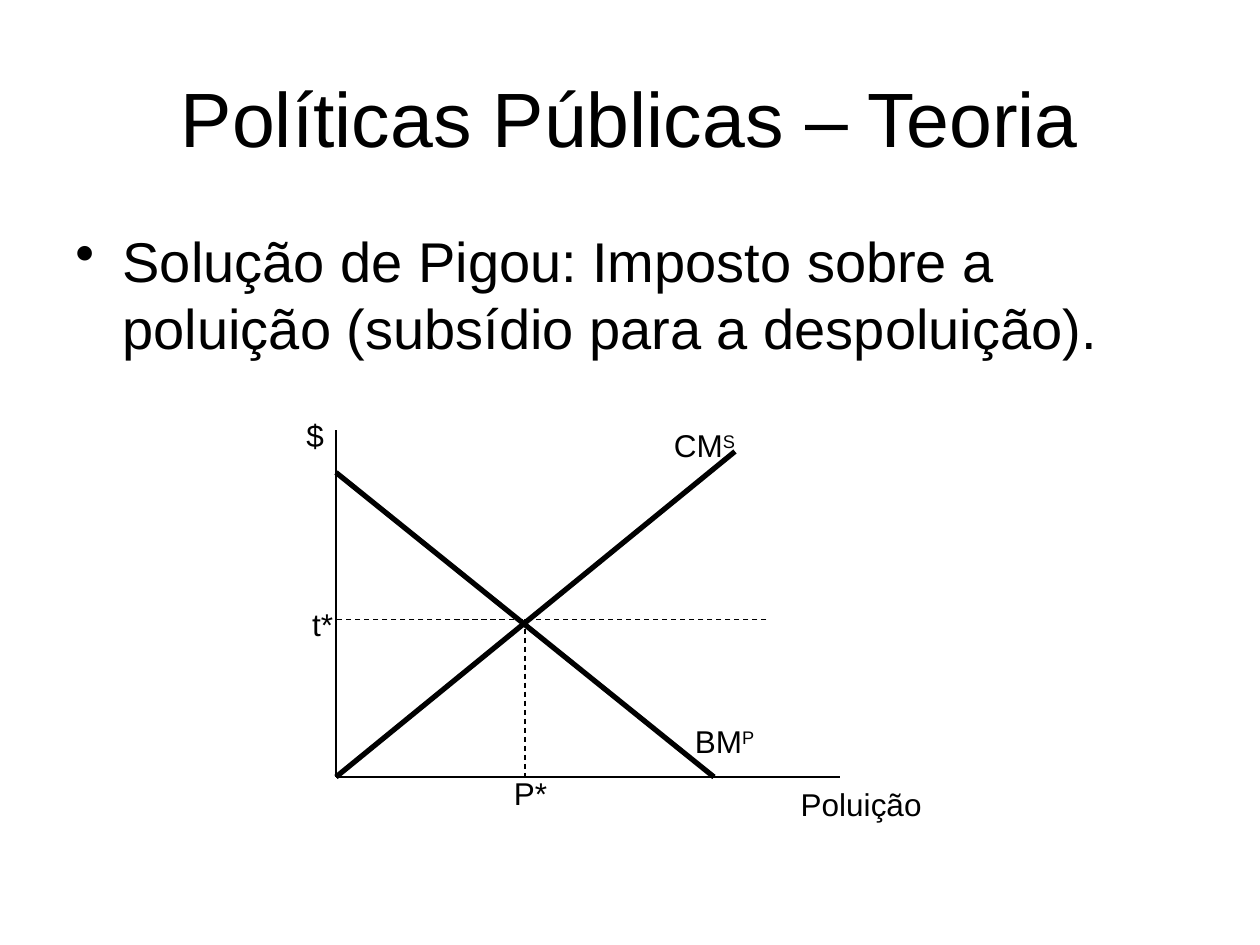
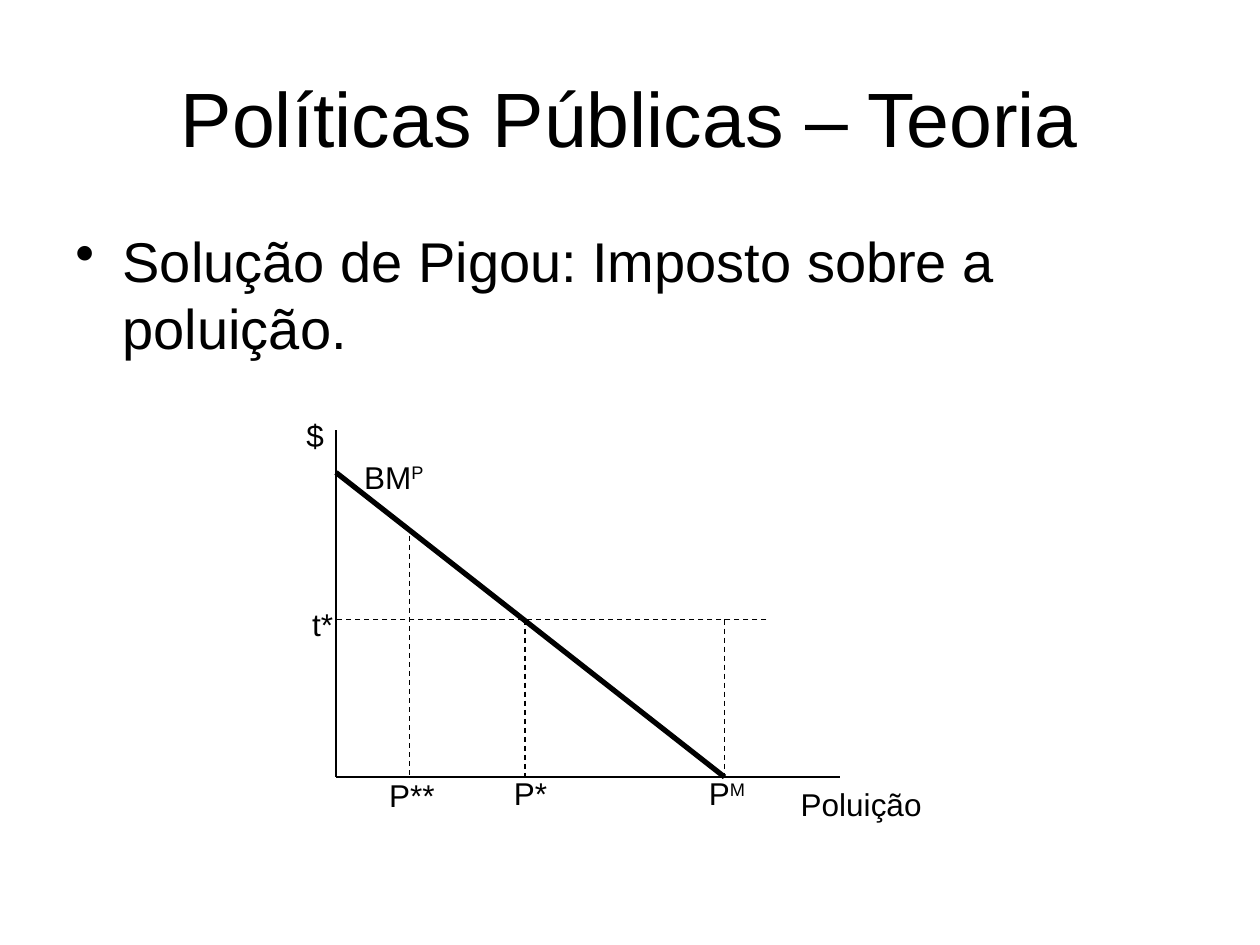
"""Build two slides on Pigou's tax, each with a pollution diagram."""
from dataclasses import dataclass

import lxml.etree
import pptx
import pptx.dml.color
import pptx.enum.dml
import pptx.enum.shapes
import pptx.enum.text
import pptx.oxml.ns
import pptx.util

Pt = pptx.util.Pt
qn = pptx.oxml.ns.qn


@dataclass(frozen=True)
class Theme:
    font: str = "Arial"
    ink: pptx.dml.color.RGBColor = pptx.dml.color.RGBColor(0, 0, 0)
    title: float = 44
    body: float = 32
    label: float = 18
    thin: float = 0.75
    thick: float = 3


@dataclass(frozen=True)
class Line:
    x1: float
    y1: float
    x2: float
    y2: float
    width: float
    dashed: bool = False


@dataclass(frozen=True)
class Label:
    text: str
    x: float
    y: float
    width: float
    sup: str = ""


@dataclass(frozen=True)
class Page:
    body: str
    lines: list[Line]
    labels: list[Label]


THEME = Theme()
TITLE = "Políticas Públicas – Teoria"
LEFT, RIGHT, TOP, BASE = 192, 480, 246, 444
DEMAND_TOP, TAX_Y, TAX_END, OPTIMUM_X = 270, 354, 438, 300
LABEL_HEIGHT = 29


def drop_line(x: float, y: float) -> Line:
    return Line(x, y, x, BASE, THEME.thin, dashed=True)


def demand(x_end: float) -> Line:
    return Line(LEFT, DEMAND_TOP, x_end, BASE, THEME.thick)


AXES = [Line(LEFT, TOP, LEFT, BASE, THEME.thin), Line(LEFT, BASE, RIGHT, BASE, THEME.thin)]
TAX_LINES = [drop_line(OPTIMUM_X, TAX_Y),
             Line(TAX_END, TAX_Y, LEFT, TAX_Y, THEME.thin, dashed=True)]
SHARED_LABELS = [
    Label("$", 168, 234, 24.5),
    Label("t*", 171.3, 342, 26.6),
    Label("P*", 286.5, 439, 34),
    Label("Poluição", 450.5, 445, 83.5),
]
PAGES = [
    Page("Solução de Pigou: Imposto sobre a poluição (subsídio para a despoluição).",
         [demand(408), Line(LEFT, BASE, 420, 258, THEME.thick)],
         [Label("BM", 390, 409, 49.7, "P"), Label("CM", 378, 240, 50.4, "S")]),
    Page("Solução de Pigou: Imposto sobre a poluição.",
         [demand(414), drop_line(414, TAX_Y), drop_line(234, 306)],
         [Label("BM", 201, 258, 49.7, "P"), Label("P", 398, 439, 36.7, "M"),
          Label("P**", 215.3, 440, 40.3)]),
]


def add_text(shapes, text: str, x: float, y: float, w: float, h: float, size: float,
             wrap: bool = True):
    sp = shapes.add_textbox(Pt(x), Pt(y), Pt(w), Pt(h))
    sp.text_frame.word_wrap = wrap
    p = sp.text_frame.paragraphs[0]
    p.add_run().text = text
    p.font.name, p.font.size, p.font.color.rgb = THEME.font, Pt(size), THEME.ink
    return sp


def add_label(shapes, label: Label) -> None:
    sp = add_text(shapes, label.text, label.x, label.y, label.width, LABEL_HEIGHT,
                  THEME.label, wrap=False)
    sp.text_frame.auto_size = pptx.enum.text.MSO_AUTO_SIZE.SHAPE_TO_FIT_TEXT
    if label.sup:
        r = sp.text_frame.paragraphs[0].add_run()
        r.text = label.sup
        r.font._element.set("baseline", "30000")


def add_line(shapes, line: Line) -> None:
    sp = shapes.add_connector(pptx.enum.shapes.MSO_CONNECTOR.STRAIGHT,
                              Pt(line.x1), Pt(line.y1), Pt(line.x2), Pt(line.y2))
    sp.line.color.rgb = THEME.ink
    sp.line.width = Pt(line.width)
    if line.dashed:
        sp.line.dash_style = pptx.enum.dml.MSO_LINE.DASH
    lxml.etree.SubElement(sp._element.spPr, qn("a:effectLst"))


def add_heading(s) -> None:
    sp = add_text(s.shapes, TITLE, 36, 21.6, 648, 90, THEME.title)
    sp.text_frame.vertical_anchor = pptx.enum.text.MSO_ANCHOR.MIDDLE
    sp.text_frame.paragraphs[0].alignment = pptx.enum.text.PP_ALIGN.CENTER


def add_body(s, text: str) -> None:
    sp = add_text(s.shapes, text, 36, 126, 648, 356.4, THEME.body)
    p = sp.text_frame.paragraphs[0]
    p.space_before = Pt(0.2 * THEME.body)
    pPr = p._p.get_or_add_pPr()
    pPr.set("marL", str(Pt(27)))
    pPr.set("indent", str(-Pt(27)))
    bullet = lxml.etree.Element(qn("a:buChar"), char="•")
    pPr.find(qn("a:defRPr")).addprevious(bullet)


def add_page(prs, page: Page) -> None:
    s = prs.slides.add_slide(prs.slide_layouts[6])
    add_heading(s)
    add_body(s, page.body)
    diagram = s.shapes.add_group_shape().shapes
    for line in AXES + page.lines + TAX_LINES:
        add_line(diagram, line)
    for label in SHARED_LABELS + page.labels:
        add_label(diagram, label)


def main() -> None:
    prs = pptx.Presentation()
    prs.slide_width, prs.slide_height = Pt(720), Pt(540)
    for page in PAGES:
        add_page(prs, page)
    prs.save("out.pptx")


if __name__ == "__main__":
    main()
